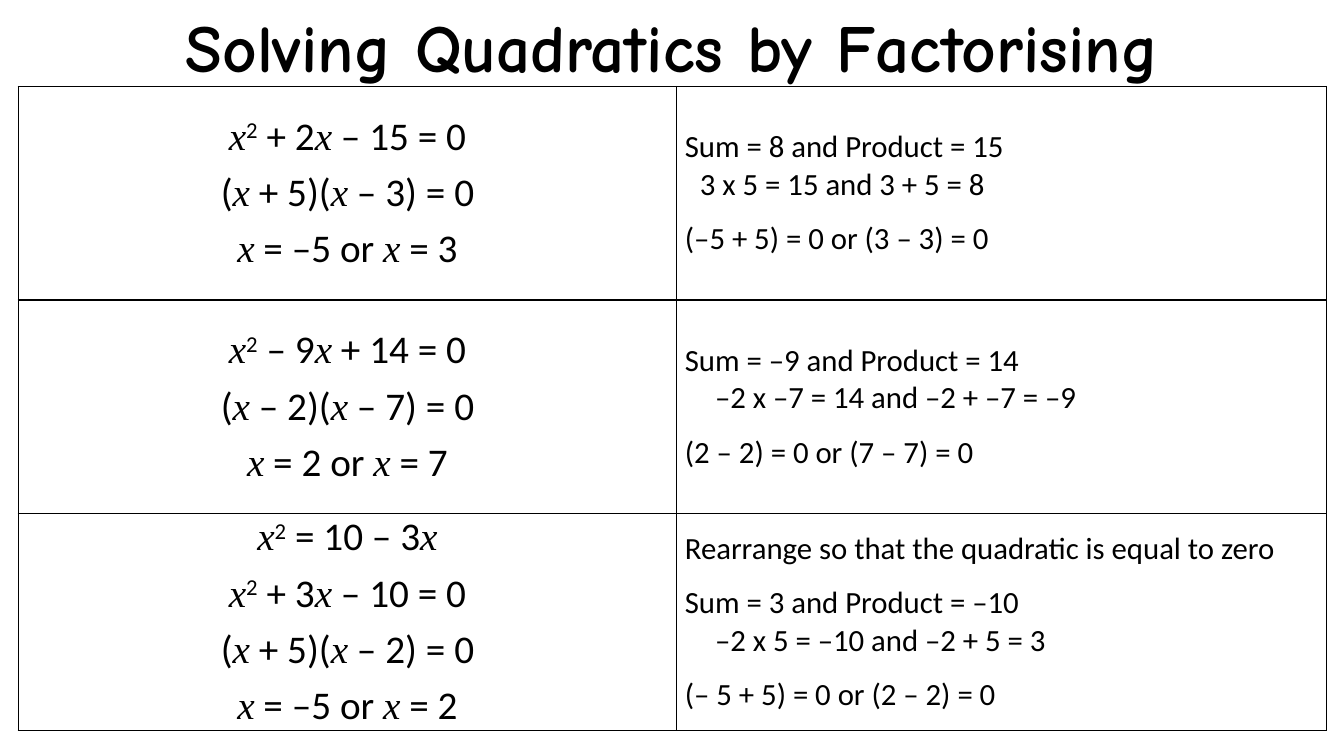
"""Build a slide of worked examples on solving quadratics by factorising."""
from itertools import groupby

from lxml.etree import SubElement
from pptx import Presentation
from pptx.dml.color import RGBColor
from pptx.enum.text import MSO_ANCHOR as Anchor, MSO_AUTO_SIZE as AutoSize, PP_ALIGN as Align
from pptx.oxml.ns import qn
from pptx.util import Cm, Pt

TITLE = "Solving Quadratics by Factorising"
BASE, SMALL, WIDE = 0.03, 0.41, 0.79
EXAMPLES = [
    (["x² + 2x – 15 = 0", "(x + 5)(x – 3) = 0", "x = –5 or x = 3"],
     [("Sum = 8 and Product = 15", BASE),
      ("3 x 5 = 15 and 3 + 5 = 8", SMALL),
      ("(–5 + 5) = 0 or (3 – 3) = 0", BASE)]),
    (["x² – 9x + 14 = 0", "(x – 2)(x – 7) = 0", "x = 2 or x = 7"],
     [("Sum = –9 and Product = 14", BASE),
      ("–2 x –7 = 14 and –2 + –7 = –9", WIDE),
      ("(2 – 2) = 0 or (7 – 7) = 0", BASE)]),
    (["x² = 10 – 3x", "x² + 3x – 10 = 0", "(x + 5)(x – 2) = 0", "x = –5 or x = 2"],
     [("Rearrange so that the quadratic is equal to zero", BASE),
      ("Sum = 3 and Product = –10", BASE),
      ("–2 x 5 = –10 and –2 + 5 = 3", WIDE),
      ("(– 5 + 5) = 0 or (2 – 2) = 0", BASE)]),
]
COLORS = {"text": "000000", "border": "000000"}
COL_WIDTHS = [16.59, 16.38]
ROW_HEIGHT = 5.38
FORMATS = {
    "title": {"name": "Comic Neue", "size": Pt(48), "bold": True},
    "maths": {"name": "Calibri", "size": Pt(28), "italic": False},
    "variable": {"name": "Times New Roman", "size": Pt(28), "italic": True},
    "note": {"name": "Calibri", "size": Pt(22)},
}
CELL = {"margin_left": Cm(0.18), "margin_right": Cm(0.18), "margin_top": 0,
        "margin_bottom": 0, "vertical_anchor": Anchor.MIDDLE}


def set_all(obj, values):
    for key, value in values.items():
        setattr(obj, key, value)


def add_run(p, text, style):
    r = p.add_run()
    r.text = text
    set_all(r.font, FORMATS[style])
    r.font.color.rgb = RGBColor.from_string(COLORS["text"])
    return r


def add_equation(p, line):
    for mark, chars in groupby(line, lambda c: c if c in "x²" else ""):
        text = "".join(chars)
        if mark == "²":
            r = add_run(p, "2", "maths")
            r._r.get_or_add_rPr().set("baseline", "30000")
        else:
            add_run(p, text, "variable" if mark else "maths")


def paragraphs(tf, lines):
    for i, line in enumerate(lines):
        yield i, tf.add_paragraph() if i else tf.paragraphs[0], line


def format_cell(cell):
    set_all(cell, CELL)
    tcPr = cell._tc.get_or_add_tcPr()
    for side in "LRTB":
        ln = SubElement(tcPr, qn(f"a:ln{side}"), w=str(Pt(1)))
        fill = SubElement(ln, qn("a:solidFill"))
        SubElement(fill, qn("a:srgbClr"), val=COLORS["border"])
    cell.fill.background()


def add_examples(s):
    sp = s.shapes.add_table(len(EXAMPLES), 2, Cm(0.46), Cm(2.18),
                            Cm(sum(COL_WIDTHS)), Cm(ROW_HEIGHT * len(EXAMPLES)))
    table = sp.table
    set_all(table, {"first_row": False, "horz_banding": False})
    for col, width in zip(table.columns, COL_WIDTHS):
        col.width = Cm(width)
    for row, (equations, notes) in zip(table.rows, EXAMPLES):
        row.height = Cm(ROW_HEIGHT)
        left, right = row.cells
        format_cell(left)
        format_cell(right)
        for i, p, line in paragraphs(left.text_frame, equations):
            set_all(p, {"alignment": Align.CENTER, "space_before": Pt(6 if i else 0)})
            add_equation(p, line)
        for i, p, (text, indent) in paragraphs(right.text_frame, notes):
            p.space_before = Pt(12 if i and indent == BASE else 0)
            p._p.get_or_add_pPr().set("marL", str(Cm(indent)))
            add_run(p, text, "note")


def main():
    prs = Presentation()
    set_all(prs, {"slide_width": Cm(33.87), "slide_height": Cm(19.05)})
    s = prs.slides.add_slide(prs.slide_layouts[5])
    sp = s.shapes.title
    set_all(sp, {"left": 0, "top": 0, "width": prs.slide_width, "height": Cm(2.31)})
    tf = sp.text_frame
    set_all(tf, {"word_wrap": True, "auto_size": AutoSize.NONE,
                 "vertical_anchor": Anchor.TOP})
    p = tf.paragraphs[0]
    p.alignment = Align.CENTER
    add_run(p, TITLE, "title")
    add_examples(s)
    prs.save("out.pptx")


if __name__ == "__main__":
    main()
